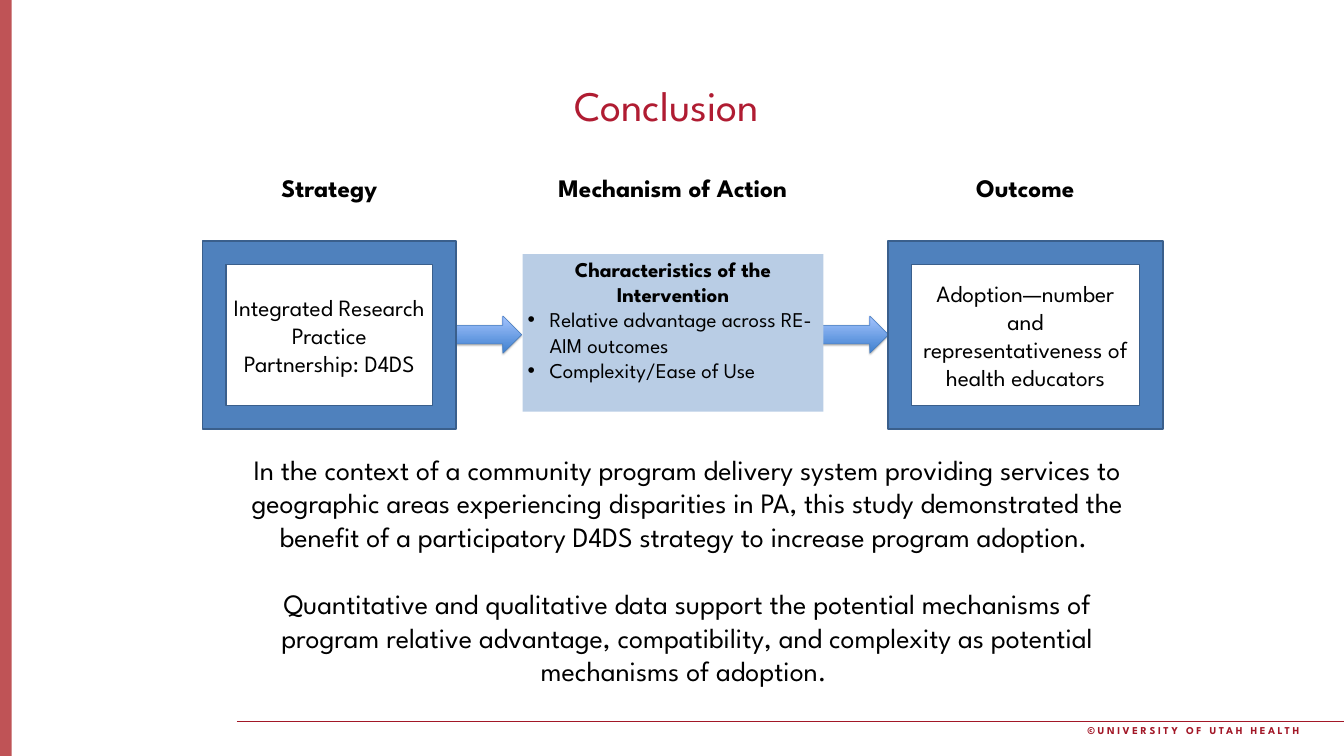
from lxml.etree import SubElement
from pptx import Presentation
from pptx.dml.color import RGBColor
from pptx.enum.shapes import MSO_CONNECTOR, MSO_SHAPE
from pptx.enum.text import MSO_ANCHOR, MSO_AUTO_SIZE, PP_ALIGN
from pptx.oxml import parse_xml
from pptx.oxml.ns import nsdecls, qn
from pptx.util import Inches, Pt

FONT = "League Spartan"
BLACK = RGBColor(0x00, 0x00, 0x00)
WHITE = RGBColor(0xFF, 0xFF, 0xFF)
SIDEBAR_RED = RGBColor(0xAF, 0x28, 0x2C)
FOOTER_RED = RGBColor(0xA2, 0x17, 0x27)
TITLE_RED = RGBColor(0xB0, 0x1C, 0x32)
FRAME_BLUE = RGBColor(0x4F, 0x81, 0xBD)
FRAME_EDGE = RGBColor(0x3A, 0x5F, 0x8C)
PALE_BLUE = RGBColor(0xB9, 0xCD, 0xE5)
ARROW_DARK = RGBColor(0x3F, 0x80, 0xCE)
ARROW_LIGHT = RGBColor(0xA4, 0xC4, 0xFF)
ARROW_EDGE = RGBColor(0x4B, 0x7E, 0xBC)

SUMMARY = [
    "In the context of a community program delivery system providing services to "
    "geographic areas experiencing disparities in PA, this study demonstrated the "
    "benefit of a participatory D4DS strategy to increase program adoption. ",
    "Quantitative and qualitative data support the potential mechanisms of program "
    "relative advantage, compatibility, and complexity as potential mechanisms of adoption. ",
]


def write_paragraph(paragraph, text, size, color=BLACK, bold=False, align=PP_ALIGN.CENTER):
    paragraph.text = text
    paragraph.alignment = align
    for run in paragraph.runs:
        run.font.name = FONT
        run.font.size = Pt(size)
        run.font.bold = bold
        run.font.color.rgb = color


def add_text(slide, box, texts, size, color=BLACK, bold=False, align=PP_ALIGN.CENTER,
             wrap=True, gap=0):
    shape = slide.shapes.add_textbox(*map(Inches, box))
    frame = shape.text_frame
    frame.word_wrap = wrap
    frame.auto_size = MSO_AUTO_SIZE.SHAPE_TO_FIT_TEXT
    for index, text in enumerate(texts):
        paragraph = frame.add_paragraph() if index else frame.paragraphs[0]
        write_paragraph(paragraph, text, size, color, bold, align)
        if index and gap:
            paragraph.space_before = Pt(gap)
    return shape


def add_block(shapes, kind, box, fill):
    shape = shapes.add_shape(kind, *map(Inches, box))
    shape.shadow.inherit = False
    shape.fill.solid()
    shape.fill.fore_color.rgb = fill
    shape.line.fill.background()
    return shape


def add_sidebar(slide):
    sidebar = add_block(slide.shapes, MSO_SHAPE.RECTANGLE, (0, 0, 0.23, 15), SIDEBAR_RED)
    color = sidebar._element.spPr.find(qn("a:solidFill"))[0]
    SubElement(color, qn("a:alpha"), val="80000")


def add_footer(slide):
    rule = slide.shapes.add_connector(
        MSO_CONNECTOR.STRAIGHT, Inches(4.7), Inches(14.32), Inches(26.67), Inches(14.32))
    rule.line.color.rgb = FOOTER_RED
    rule.line.width = Pt(1)
    SubElement(rule._element.spPr, qn("a:effectLst"))
    footer = add_text(slide, (19.07, 14.32, 6.82, 0.35), ["©UNIVERSITY OF UTAH HEALTH"], 15,
                      FOOTER_RED, True, PP_ALIGN.RIGHT)
    footer.text_frame.paragraphs[0].runs[0]._r.get_or_add_rPr().set("spc", "380")


def add_arrow(slide, left):
    arrow = add_block(slide.shapes, MSO_SHAPE.RIGHT_ARROW, (left, 6.27, 1.32, 0.74), ARROW_DARK)
    arrow.fill.gradient()
    arrow.fill.gradient_angle = 90
    for stop, color in zip(arrow.fill.gradient_stops, (ARROW_DARK, ARROW_LIGHT)):
        stop.color.rgb = color
    arrow.line.color.rgb = ARROW_EDGE
    arrow.line.width = Pt(0.75)
    arrow._element.spPr.find(qn("a:effectLst")).append(parse_xml(
        f'<a:outerShdw {nsdecls("a")} blurRad="{Pt(3.1)}" dist="{Pt(1.8)}" dir="5400000" '
        'rotWithShape="0"><a:srgbClr val="000000"><a:alpha val="35000"/></a:srgbClr>'
        '</a:outerShdw>'))


def add_framed_box(slide, outer, inner, text):
    group = slide.shapes.add_group_shape()
    add_block(group.shapes, MSO_SHAPE.RECTANGLE, inner, WHITE)
    border = add_block(group.shapes, MSO_SHAPE.FRAME, outer, FRAME_BLUE)
    border.line.color.rgb = FRAME_EDGE
    border.line.width = Pt(2)
    frame = border.text_frame
    frame.word_wrap = True
    frame.vertical_anchor = MSO_ANCHOR.MIDDLE
    frame.margin_left = frame.margin_right = Inches(0.15)
    frame.margin_top = frame.margin_bottom = Inches(0.07)
    write_paragraph(frame.paragraphs[0], text, 33.3)


def add_mechanism_box(slide, heading, bullets):
    box = add_block(slide.shapes, MSO_SHAPE.RECTANGLE, (10.37, 5.04, 5.97, 3.13), PALE_BLUE)
    frame = box.text_frame
    frame.word_wrap = True
    frame.vertical_anchor = MSO_ANCHOR.TOP
    write_paragraph(frame.paragraphs[0], heading, 30, bold=True)
    for bullet in bullets:
        paragraph = frame.add_paragraph()
        properties = paragraph._p.get_or_add_pPr()
        properties.set("marL", str(Inches(0.44)))
        properties.set("indent", str(-Inches(0.44)))
        SubElement(properties, qn("a:buFont"), typeface="Arial")
        SubElement(properties, qn("a:buChar"), char="•")
        write_paragraph(paragraph, bullet, 30, align=PP_ALIGN.LEFT)


def main():
    presentation = Presentation()
    presentation.slide_width = Inches(26.67)
    presentation.slide_height = Inches(15)
    slide = presentation.slides.add_slide(presentation.slide_layouts[6])

    add_sidebar(slide)
    add_footer(slide)
    title = add_text(slide, (7, 1.48, 12.66, 1.2), ["Conclusion "], 60, TITLE_RED)
    title.text_frame.auto_size = MSO_AUTO_SIZE.NONE
    title.text_frame.vertical_anchor = MSO_ANCHOR.MIDDLE

    for heading, left, width, wrap in (("Strategy", 5.43, 2.21, False),
                                       ("Mechanism of Action", 10.65, 5.4, False),
                                       ("Outcome", 18.9, 2.89, True)):
        add_text(slide, (left, 3.37, width, 0.71), [heading], 36, bold=True, wrap=wrap)

    for left in (9.03, 16.31):
        add_arrow(slide, left)
    add_framed_box(slide, (4.02, 4.78, 5.03, 3.73), (4.54, 5.19, 4.01, 2.89),
                   "Integrated Research Practice Partnership: D4DS")
    add_mechanism_box(slide, "Characteristics of the Intervention",
                      ["Relative advantage across RE-AIM outcomes", "Complexity/Ease of Use"])
    add_framed_box(slide, (17.62, 4.78, 5.46, 3.73), (18.19, 5.19, 4.36, 2.9),
                   "Adoption—number and representativeness of health educators")
    add_text(slide, (4.72, 8.92, 17.83, 5.49), SUMMARY, 40, gap=48)

    presentation.save("out.pptx")


if __name__ == "__main__":
    main()
